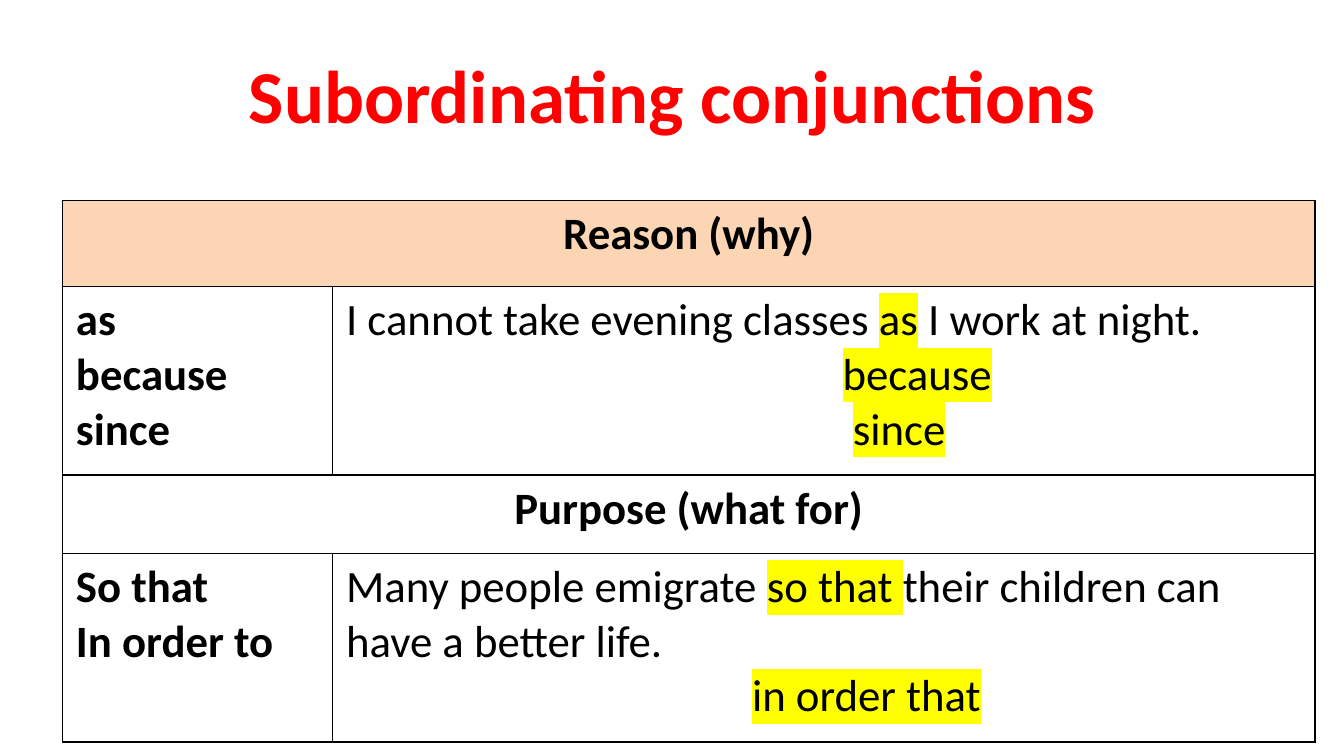
from lxml.etree import SubElement
from pptx import Presentation
from pptx.dml.color import RGBColor
from pptx.enum.text import MSO_ANCHOR, PP_ALIGN
from pptx.oxml import parse_xml
from pptx.oxml.ns import nsdecls, qn
from pptx.util import Pt

RED = RGBColor(0xFF, 0x00, 0x00)
BLACK = RGBColor(0x00, 0x00, 0x00)
PEACH = RGBColor(0xFC, 0xD5, 0xB5)
YELLOW = RGBColor(0xFF, 0xFF, 0x00)

TITLE = {"name": "Calibri", "size": Pt(40), "bold": True}
STRONG = {"name": "Calibri", "size": Pt(24), "bold": True}
PLAIN = {**STRONG, "bold": False}


def add_run(paragraph, text, style, color=BLACK, marked=False):
    run = paragraph.add_run()
    run.text = text
    for attribute, value in style.items():
        setattr(run.font, attribute, value)
    run.font.color.rgb = color
    if marked:
        highlight = parse_xml(
            f'<a:highlight {nsdecls("a")}><a:srgbClr val="{YELLOW}"/></a:highlight>')
        run.font._element.find(qn("a:solidFill")).addnext(highlight)


def fill_cell(cell, lines, style, align=PP_ALIGN.LEFT):
    """Write lines of (indent, parts); every second part is highlighted."""
    frame = cell.text_frame
    for number, (indent, parts) in enumerate(lines):
        paragraph = frame.add_paragraph() if number else frame.paragraphs[0]
        paragraph.alignment = align
        if indent:
            paragraph._p.get_or_add_pPr().set("marL", str(Pt(indent)))
        for position, text in enumerate(parts):
            if text:
                add_run(paragraph, text, style, marked=position % 2 == 1)


prs = Presentation()
prs.slide_width, prs.slide_height = Pt(720), Pt(405)
slide = prs.slides.add_slide(prs.slide_layouts[6])

title = slide.shapes.add_textbox(Pt(35), Pt(20), Pt(650), Pt(60.5)).text_frame
title.word_wrap = True
title.vertical_anchor = MSO_ANCHOR.MIDDLE
title.paragraphs[0].alignment = PP_ALIGN.CENTER
add_run(title.paragraphs[0], "Subordinating conjunctions", TITLE, RED)

column_widths = [144.7, 526.3]
row_heights = [46, 101, 42, 101]
table = slide.shapes.add_table(
    len(row_heights), len(column_widths), Pt(33.5), Pt(107.5),
    Pt(sum(column_widths)), Pt(sum(row_heights))).table
table.first_row = table.horz_banding = False
for column, width in zip(table.columns, column_widths):
    column.width = Pt(width)
for row, height in zip(table.rows, row_heights):
    row.height = Pt(height)

for cell in table.iter_cells():
    properties = cell._tc.get_or_add_tcPr()
    for side in ("lnL", "lnR", "lnT", "lnB"):
        border = SubElement(properties, qn(f"a:{side}"), w=str(Pt(1)))
        SubElement(SubElement(border, qn("a:solidFill")), qn("a:srgbClr"), val=str(BLACK))
    cell.fill.background()

# Heading, heading fill, conjunctions, example lines as (indent, parts)
sections = [
    ("Reason (why)", PEACH, ["as", "because", "since"],
     [(0, ["I cannot take evening classes ", "as", " I work at night."]),
      (266, ["", "because"]),
      (271.5, ["", "since"])]),
    ("Purpose (what for)", None, ["So that", "In order to"],
     [(0, ["Many people emigrate ", "so that ", "their children can have a better life."]),
      (217.5, ["", "in order that"])]),
]
for index, (heading, color, conjunctions, examples) in enumerate(sections):
    top = 2 * index
    heading_cell = table.cell(top, 0)
    heading_cell.merge(table.cell(top, 1))
    if color:
        heading_cell.fill.solid()
        heading_cell.fill.fore_color.rgb = color
    fill_cell(heading_cell, [(0, [heading])], STRONG, PP_ALIGN.CENTER)
    fill_cell(table.cell(top + 1, 0), [(0, [word]) for word in conjunctions], STRONG)
    fill_cell(table.cell(top + 1, 1), examples, PLAIN)

prs.save("out.pptx")
